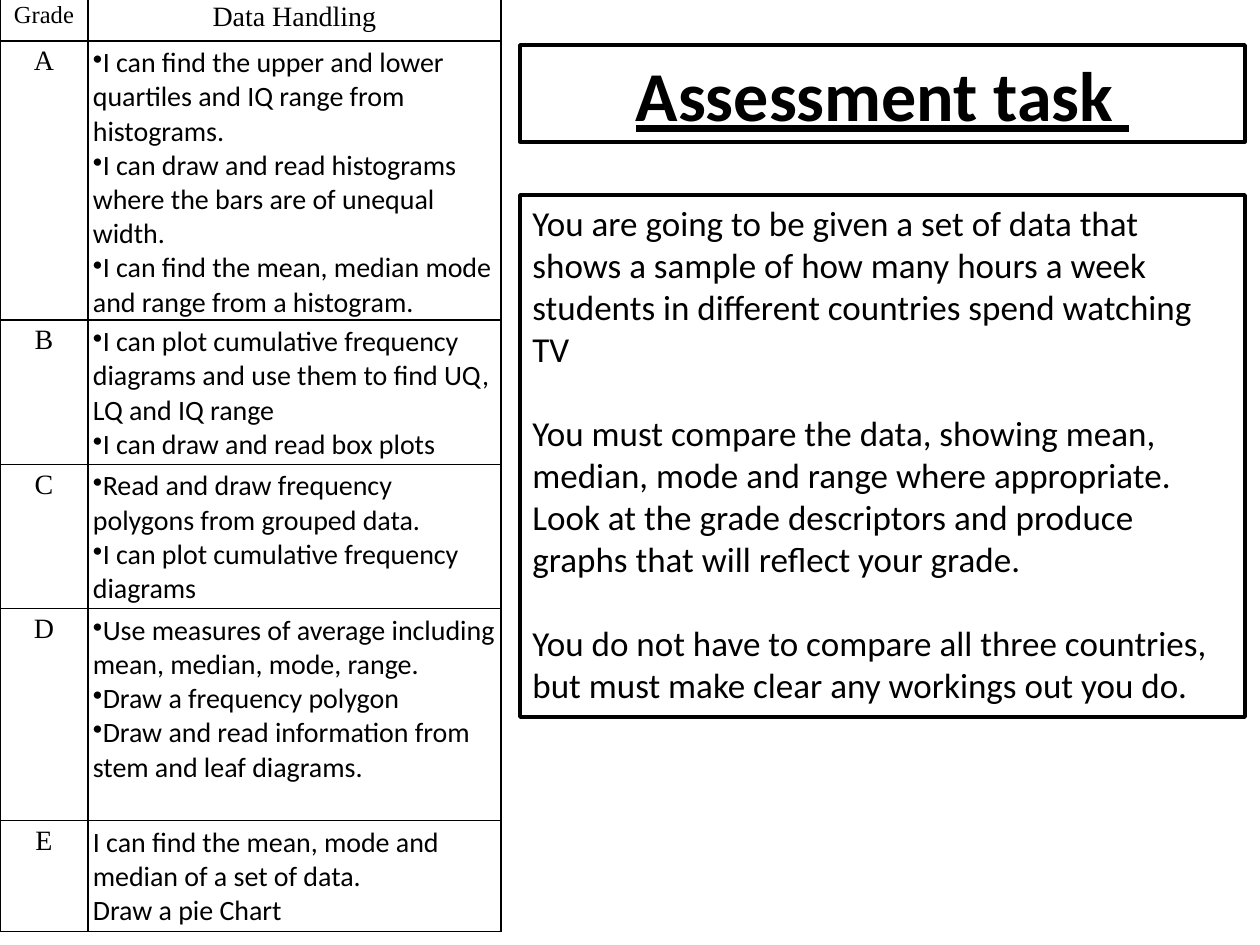
import pptx
import pptx.dml.color
import pptx.enum.shapes
import pptx.enum.text
import pptx.oxml
import pptx.oxml.ns
import pptx.util

EMU_PER_PX = 914400 / 126
COLORS = {"ink": "000000", "paper": "FFFFFF"}
BODY_FONT = "Calibri"
TABLE_FONT = "Times New Roman"
ALIGN = pptx.enum.text.PP_ALIGN

BRIEF = [
    "You are going to be given a set of data that shows a sample of how many hours a week "
    "students in different countries spend watching TV",
    "You must compare the data, showing mean, median, mode and range where appropriate. "
    "Look at the grade descriptors and produce graphs that will reflect your grade.",
    "You do not have to compare all three countries, but must make clear any workings out you do.",
]

# Grade, row height in px, bulleted or not, descriptors
GRADES = [
    ("A", 279, True, [
        "I can find the upper and lower quartiles and IQ range from histograms.",
        "I can draw and read histograms where the bars are of unequal width.",
        "I can find the mean, median mode and range from a histogram."]),
    ("B", 144, True, [
        "I can plot cumulative frequency diagrams and use them to find UQ, LQ and IQ range",
        "I can draw and read box plots"]),
    ("C", 144, True, [
        "Read and draw frequency polygons from grouped data.",
        "I can plot cumulative frequency diagrams"]),
    ("D", 212, True, [
        "Use measures of average including mean, median, mode, range.",
        "Draw a frequency polygon",
        "Draw and read information from stem and leaf diagrams."]),
    ("E", 111, False, [
        "I can find the mean, mode and median of a set of data.",
        "Draw a pie Chart"]),
]
HEADER_HEIGHT = 44
COLUMN_WIDTHS = [88, 413]


def px(value):
    return pptx.util.Emu(round(value * EMU_PER_PX))


def rgb(name):
    return pptx.dml.color.RGBColor.from_string(COLORS[name])


def add_paragraphs(frame, texts, size, font, align=ALIGN.LEFT, gap=0, bold=None, bullet=False):
    for index, text in enumerate(texts):
        paragraph = frame.paragraphs[0] if index == 0 else frame.add_paragraph()
        paragraph.alignment = align
        if index:
            paragraph.space_before = pptx.util.Pt(gap)
        if bullet:
            add_bullet(paragraph)
        run = paragraph.add_run()
        run.text = text
        run.font.size = pptx.util.Pt(size)
        run.font.name = font
        run.font.color.rgb = rgb("ink")
        run.font.bold = bold
        run.font.underline = bold


def add_bullet(paragraph):
    properties = paragraph._p.get_or_add_pPr()
    properties.set("marL", "0")
    properties.set("indent", "0")
    properties.append(pptx.oxml.parse_xml(
        f'<a:buChar {pptx.oxml.ns.nsdecls("a")} char="•"/>'))


def add_box(slide, left, top, width, height, texts, size, **style):
    shape = slide.shapes.add_shape(
        pptx.enum.shapes.MSO_SHAPE.RECTANGLE, px(left), px(top), px(width), px(height))
    shape.shadow.inherit = False
    shape.fill.solid()
    shape.fill.fore_color.rgb = rgb("paper")
    shape.line.color.rgb = rgb("ink")
    shape.line.width = pptx.util.Pt(2)
    frame = shape.text_frame
    frame.word_wrap = True
    frame.auto_size = pptx.enum.text.MSO_AUTO_SIZE.SHAPE_TO_FIT_TEXT
    frame.vertical_anchor = pptx.enum.text.MSO_ANCHOR.TOP
    add_paragraphs(frame, texts, size, BODY_FONT, **style)


def add_borders(cell):
    properties = cell._tc.get_or_add_tcPr()
    for position, side in enumerate(("lnL", "lnR", "lnT", "lnB")):
        properties.insert(position, pptx.oxml.parse_xml(
            f'<a:{side} {pptx.oxml.ns.nsdecls("a")} w="12700"><a:solidFill>'
            f'<a:srgbClr val="{COLORS["ink"]}"/></a:solidFill></a:{side}>'))


def fill_cell(cell, texts, size, font, **style):
    cell.margin_left = cell.margin_right = cell.margin_top = cell.margin_bottom = px(5)
    cell.fill.background()
    add_borders(cell)
    add_paragraphs(cell.text_frame, texts, size, font, **style)


def add_grade_table(slide, left, top):
    heights = [HEADER_HEIGHT] + [grade[1] for grade in GRADES]
    table = slide.shapes.add_table(
        len(heights), len(COLUMN_WIDTHS), px(left), px(top),
        px(sum(COLUMN_WIDTHS)), px(sum(heights))).table
    table.first_row = table.horz_banding = False
    for column, width in zip(table.columns, COLUMN_WIDTHS):
        column.width = px(width)
    for row, height in zip(table.rows, heights):
        row.height = px(height)

    # Header row
    for column, (text, size) in enumerate([("Grade", 14), ("Data Handling", 16)]):
        fill_cell(table.cell(0, column), [text], size, TABLE_FONT, align=ALIGN.CENTER)

    # One row for each grade
    for row, (grade, _, bullet, descriptors) in enumerate(GRADES, start=1):
        fill_cell(table.cell(row, 0), [grade], 16, TABLE_FONT, align=ALIGN.CENTER)
        fill_cell(table.cell(row, 1), descriptors, 16, BODY_FONT, bullet=bullet)


def main():
    presentation = pptx.Presentation()
    presentation.slide_width = px(1260)
    presentation.slide_height = px(945)
    slide = presentation.slides.add_slide(presentation.slide_layouts[6])

    # Title and task brief
    add_box(slide, 520, 45, 725, 97, ["Assessment task "], 40, align=ALIGN.CENTER, bold=True)
    add_box(slide, 520, 195, 725, 522, BRIEF, 20, gap=24)

    # Grade descriptors
    add_grade_table(slide, 0, -3)

    presentation.save("out.pptx")


if __name__ == "__main__":
    main()
